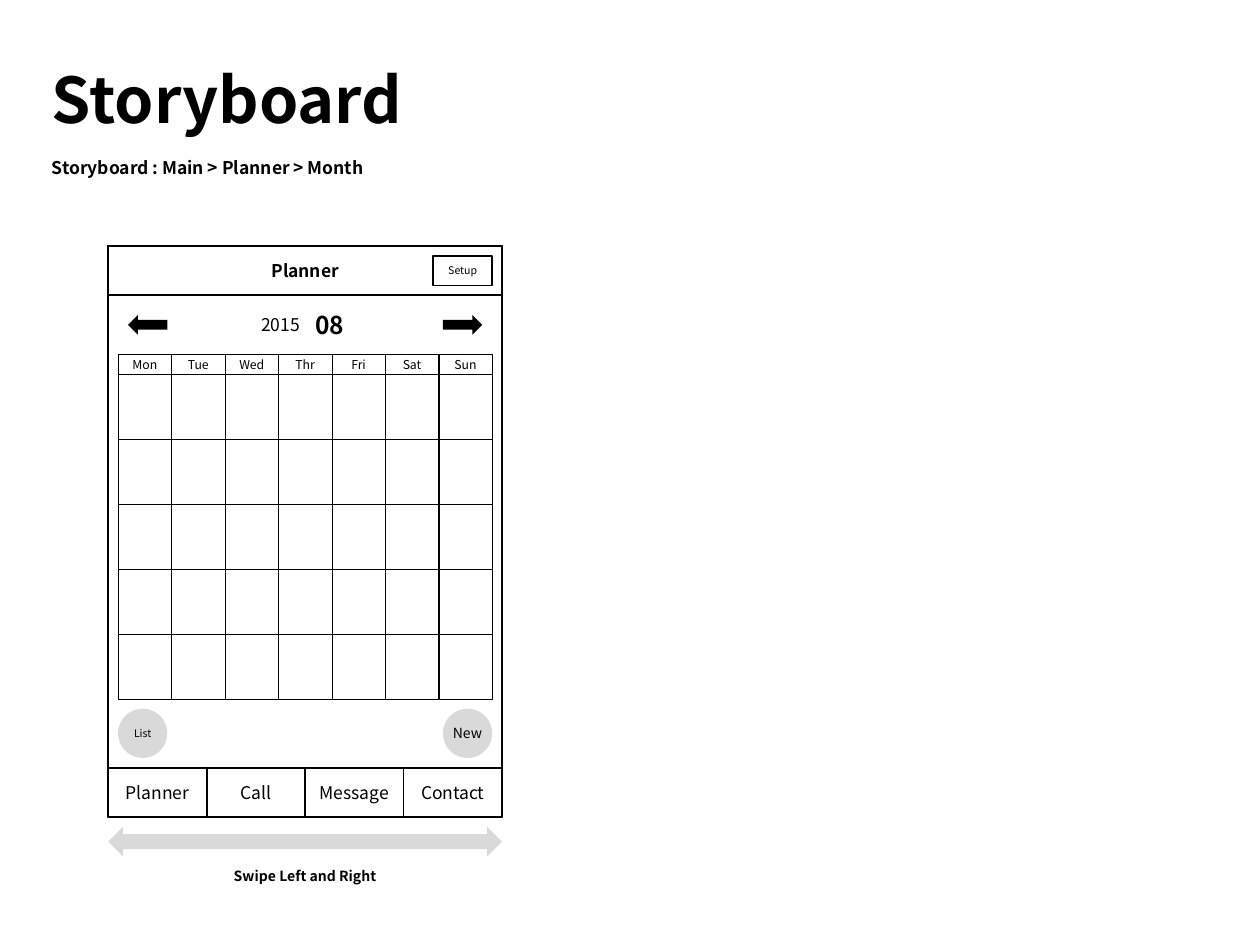
"""Builds the storyboard slide for the monthly planner screen."""
from pptx import Presentation
from pptx.dml.color import RGBColor
from pptx.enum.shapes import MSO_SHAPE
from pptx.enum.text import MSO_ANCHOR, MSO_AUTO_SIZE, PP_ALIGN
from pptx.util import Inches, Pt

RECTANGLE, OVAL = MSO_SHAPE.RECTANGLE, MSO_SHAPE.OVAL
ARROW_LEFT, ARROW_RIGHT = MSO_SHAPE.LEFT_ARROW, MSO_SHAPE.RIGHT_ARROW
ARROW_BOTH = MSO_SHAPE.LEFT_RIGHT_ARROW
LEFT, CENTER = PP_ALIGN.LEFT, PP_ALIGN.CENTER
MIDDLE, NO_AUTOFIT = MSO_ANCHOR.MIDDLE, MSO_AUTO_SIZE.NONE

COLORS = {"ink": "000000", "muted": "D9D9D9"}
FONT = "Noto Sans CJK KR"
GRID_COLUMNS = 128
TITLE_ONLY = 5
WEEKDAYS = ["Mon", "Tue", "Wed", "Thr", "Fri", "Sat", "Sun"]
TABS = ["Planner", "Call", "Message", "Contact"]
WEEKS = 5


class Storyboard:
    """Holds the slide and its style; places are columns and rows of a square grid."""

    def __init__(self, deck):
        self.unit = deck.slide_width / GRID_COLUMNS
        self.slide = deck.slides.add_slide(deck.slide_layouts[TITLE_ONLY])

    def box(self, *cells):
        return [round(cell * self.unit) for cell in cells]

    def color(self, name):
        return RGBColor.from_string(COLORS[name])

    def set_text(self, shape, text, size, bold=False, align=CENTER, inset=0):
        frame = shape.text_frame
        frame.text = text
        frame.word_wrap = True
        frame.auto_size = NO_AUTOFIT
        frame.vertical_anchor = MIDDLE
        frame.margin_left = frame.margin_right = Inches(inset)
        frame.margin_top = frame.margin_bottom = 0
        paragraph = frame.paragraphs[0]
        paragraph.alignment = align
        font = paragraph.runs[0].font
        font.name, font.size, font.bold = FONT, Pt(size), bold
        font.color.rgb = self.color("ink")

    def title(self, place, text, size):
        heading = self.slide.shapes.title
        heading.left, heading.top, heading.width, heading.height = self.box(*place)
        self.set_text(heading, text, size, True, LEFT, 0.1)

    def label(self, place, text, size, **style):
        self.set_text(self.slide.shapes.add_textbox(*self.box(*place)), text, size, **style)

    def frame(self, place, text="", size=10, bold=False, line=1, group=None):
        shapes = (group or self.slide).shapes
        outline = shapes.add_shape(RECTANGLE, *self.box(*place))
        outline.shadow.inherit = False
        outline.fill.background()
        outline.line.color.rgb = self.color("ink")
        outline.line.width = Pt(line)
        if text:
            self.set_text(outline, text, size, bold)

    def solid(self, kind, place, color, text="", size=8):
        symbol = self.slide.shapes.add_shape(kind, *self.box(*place))
        symbol.shadow.inherit = False
        symbol.fill.solid()
        symbol.fill.fore_color.rgb = self.color(color)
        symbol.line.fill.background()
        if text:
            self.set_text(symbol, text, size)

    def calendar(self, left, top, width, header_height, week_height):
        day_width = width / len(WEEKDAYS)
        header = self.slide.shapes.add_group_shape()
        for column, weekday in enumerate(WEEKDAYS):
            place = (left + column * day_width, top, day_width, header_height)
            self.frame(place, weekday, 7, line=0.25, group=header)
        days = self.slide.shapes.add_group_shape()
        for week in range(WEEKS):
            week_top = top + header_height + week * week_height
            for column in range(len(WEEKDAYS)):
                place = (left + column * day_width, week_top, day_width, week_height)
                self.frame(place, line=0.25, group=days)


def main():
    deck = Presentation()
    deck.slide_width, deck.slide_height = Inches(10), Inches(7.5)
    board = Storyboard(deck)

    board.title((4, 4, 93, 12), "Storyboard", 36)
    board.label((4, 15, 93, 4), "Storyboard : Main > Planner > Month", 10,
                bold=True, align=LEFT, inset=0.1)

    board.frame((11, 25, 40, 58))
    board.frame((11, 25, 40, 5), "Planner", bold=True)
    board.frame((44, 26, 6, 3), "Setup", 6)

    board.label((26, 31, 5, 4), "2015", 10)
    board.label((31, 31, 5, 4), "08", 14, bold=True)
    board.solid(ARROW_LEFT, (13, 32, 4, 2), "ink")
    board.solid(ARROW_RIGHT, (45, 32, 4, 2), "ink")
    board.calendar(12, 36, 38, 2, 6.6)

    board.solid(OVAL, (12, 72, 5, 5), "muted", "List", 6)
    board.solid(OVAL, (45, 72, 5, 5), "muted", "New", 8)
    for index, tab in enumerate(TABS):
        board.frame((11 + 10 * index, 78, 10, 5), tab)

    board.solid(ARROW_BOTH, (11, 84, 40, 3), "muted")
    board.label((21, 87, 20, 4), "Swipe Left and Right", 8, bold=True)
    deck.save("out.pptx")


if __name__ == "__main__":
    main()
